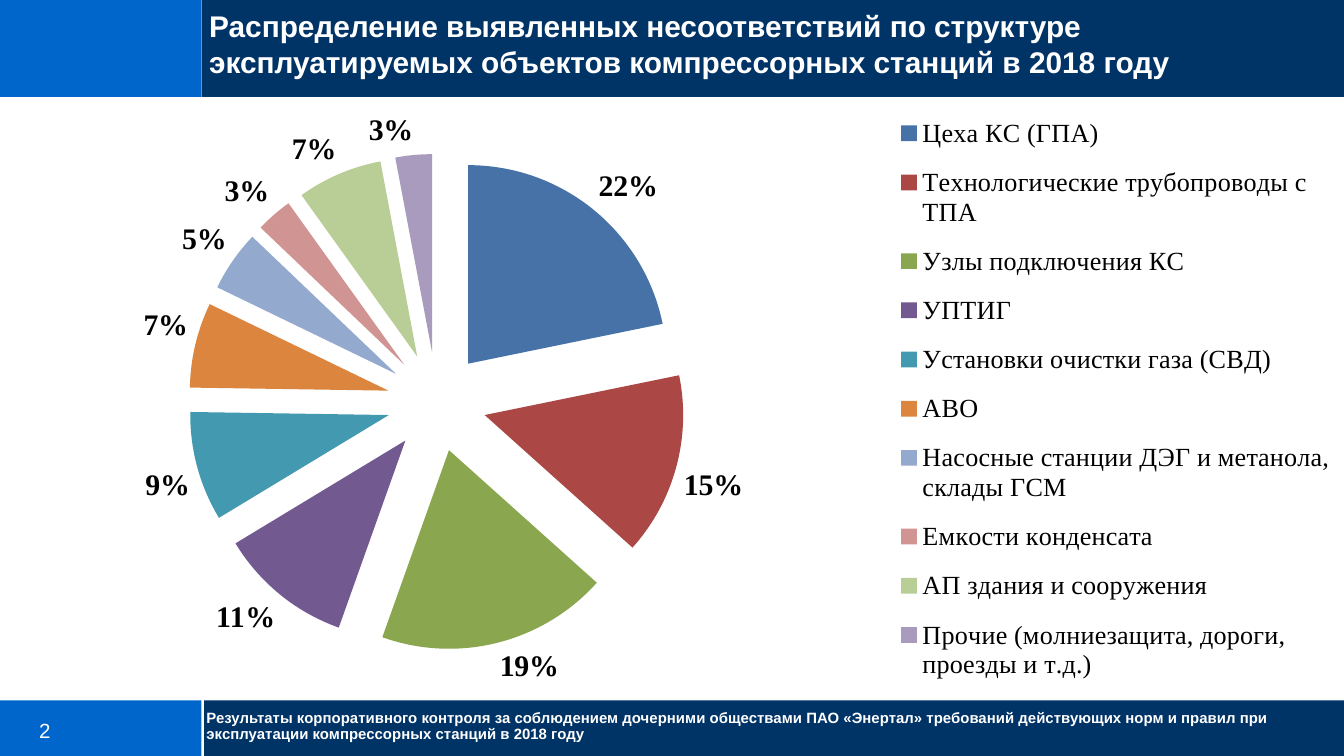
from dataclasses import dataclass

from lxml.etree import SubElement
from pptx import Presentation
from pptx.chart.data import CategoryChartData
from pptx.dml.color import RGBColor
from pptx.enum.chart import XL_CHART_TYPE as ChartType
from pptx.enum.chart import XL_LABEL_POSITION as LabelPosition
from pptx.enum.chart import XL_LEGEND_POSITION as LegendPosition
from pptx.enum.shapes import MSO_SHAPE as ShapeKind
from pptx.oxml import parse_xml
from pptx.oxml.ns import nsdecls, qn
from pptx.util import Pt


@dataclass(frozen=True)
class Theme:
    """Colours, fonts and type sizes of the deck."""

    navy: str = "003366"
    blue: str = "0066CC"
    white: str = "FFFFFF"
    black: str = "000000"
    sans: str = "Arial"
    serif: str = "Times New Roman"
    chart_font: str = "Calibri"
    title_size: int = 16
    footer_size: int = 8
    number_size: int = 11
    chart_size: int = 10
    legend_size: int = 14
    label_size: int = 16
    slices: tuple = (
        "4672A8", "AB4744", "8AA64F", "725990", "4299B0",
        "DC853E", "93A9CE", "D09493", "B9CD96", "A99BBD",
    )


THEME = Theme()
SLIDE_WIDTH, SLIDE_HEIGHT = 720, 405
SIDE_WIDTH = 108

TITLE = (
    "Распределение выявленных несоответствий по структуре "
    "эксплуатируемых объектов компрессорных станций в 2018 году"
)
FOOTER = (
    "Результаты корпоративного контроля за соблюдением дочерними обществами "
    "ПАО «Энертал» требований действующих норм и правил при эксплуатации "
    "компрессорных станций в 2018 году"
)
SHARES = {
    "Цеха КС (ГПА)": 22,
    "Технологические трубопроводы с ТПА": 15,
    "Узлы подключения КС": 19,
    "УПТИГ": 11,
    "Установки очистки газа (СВД)": 9,
    "АВО": 7,
    "Насосные станции ДЭГ и метанола, склады ГСМ": 5,
    "Емкости конденсата": 3,
    "АП здания и сооружения": 7,
    "Прочие (молниезащита, дороги, проезды и т.д.)": 3,
}


def style_font(font, name, size, color, bold=False):
    """Apply a typeface, size, colour and weight to a font."""
    for key, value in {"name": name, "size": Pt(size), "bold": bold}.items():
        setattr(font, key, value)
    font.color.rgb = RGBColor.from_string(color)


def add_band(page, box, color):
    """Draw a flat filled rectangle."""
    band = page.shapes.add_shape(ShapeKind.RECTANGLE, *map(Pt, box))
    band.shadow.inherit = False
    band.fill.solid()
    band.fill.fore_color.rgb = RGBColor.from_string(color)
    band.line.fill.background()


def add_text(page, box, text, size, bold=True, inset=(7.2, 3.6), spacing=1.0):
    """Place one white paragraph in a wrapping text box."""
    frame = page.shapes.add_textbox(*map(Pt, box)).text_frame
    side, edge = map(Pt, inset)
    settings = {
        "word_wrap": True,
        "margin_left": side,
        "margin_right": side,
        "margin_top": edge,
        "margin_bottom": edge,
    }
    for key, value in settings.items():
        setattr(frame, key, value)
    para = frame.paragraphs[0]
    para.line_spacing = spacing
    span = para.add_run()
    span.text = text
    style_font(span.font, THEME.sans, size, THEME.white, bold)


def add_header(page, box):
    """Build the title bar with its blue corner."""
    left, top, width, height = box
    add_band(page, (left, top, SIDE_WIDTH, height), THEME.blue)
    add_band(page, (left + SIDE_WIDTH, top, width - SIDE_WIDTH, height), THEME.navy)
    add_text(page, (left + 105, top + 0.7, 608.4, 46), TITLE, THEME.title_size)


def add_footer(page, box):
    """Build the bottom bar with the page number and report name."""
    left, top, width, height = box
    start = SIDE_WIDTH + 1.4
    add_band(page, (left + start, top, width - start, height), THEME.navy)
    add_band(page, (left, top, SIDE_WIDTH, height), THEME.blue)
    add_text(page, (left + 21, top + 9.4, 38, 10), "2", THEME.number_size,
             bold=False, inset=(0, 0))
    add_text(page, (left + 105, top + 2.8, 589, 23), FOOTER, THEME.footer_size,
             inset=(5.6, 2.8), spacing=0.9)


def make_layout(x, y, w, h, inner=False):
    """Return a manual chart layout in fractions of the chart area."""
    layout = parse_xml(f"<c:layout {nsdecls('c')}><c:manualLayout/></c:layout>")
    target = {"layoutTarget": "inner"} if inner else {}
    values = {**target, "xMode": "edge", "yMode": "edge", "x": x, "y": y, "w": w, "h": h}
    for tag, value in values.items():
        SubElement(layout[0], qn(f"c:{tag}"), val=str(value))
    return layout


def add_pie(page, box):
    """Build the exploded pie with percentage labels and a legend."""
    data = CategoryChartData()
    data.categories = list(SHARES)
    data.add_series("Series 1", list(SHARES.values()))
    chart = page.shapes.add_chart(ChartType.PIE, *map(Pt, box), data).chart
    chart.has_title = False
    style_font(chart.font, THEME.chart_font, THEME.chart_size, THEME.black)

    plot = chart.plots[0]
    plot.vary_by_categories = True
    plot.has_data_labels = True
    labels = plot.data_labels
    label_settings = {
        "show_percentage": True,
        "show_value": False,
        "number_format": "0%",
        "number_format_is_linked": False,
        "position": LabelPosition.OUTSIDE_END,
    }
    for key, value in label_settings.items():
        setattr(labels, key, value)
    style_font(labels.font, THEME.serif, THEME.label_size, THEME.black, True)

    series = plot.series[0]
    for index, color in enumerate(THEME.slices):
        fill = series.points[index].format.fill
        fill.solid()
        fill.fore_color.rgb = RGBColor.from_string(color)
    explosion = parse_xml(f"<c:explosion {nsdecls('c')} val='25'/>")
    chart.element.xpath(".//c:ser/c:tx")[0].addnext(explosion)

    chart.has_legend = True
    legend = chart.legend
    legend.position = LegendPosition.RIGHT
    legend.include_in_layout = False
    style_font(legend.font, THEME.serif, THEME.legend_size, THEME.black)
    for old in chart.element.xpath(".//c:plotArea/c:layout | .//c:legend/c:layout"):
        old.getparent().remove(old)
    plot_area = chart.element.xpath(".//c:plotArea")[0]
    plot_area.insert(0, make_layout(0.14, 0.1, 0.37, 0.81, inner=True))
    legend_place = chart.element.xpath(".//c:legend/c:legendPos")[0]
    legend_place.addnext(make_layout(0.66, 0.01, 0.34, 0.98))


def main():
    """Create the deck and save it."""
    deck = Presentation()
    deck.slide_width, deck.slide_height = Pt(SLIDE_WIDTH), Pt(SLIDE_HEIGHT)
    page = deck.slides.add_slide(deck.slide_layouts[6])
    add_footer(page, (0, 375.2, SLIDE_WIDTH, 29.8))
    add_header(page, (0, 0, SLIDE_WIDTH, 52))
    add_pie(page, (0, 49.7, SLIDE_WIDTH, 328.3))
    deck.save("out.pptx")


if __name__ == "__main__":
    main()
